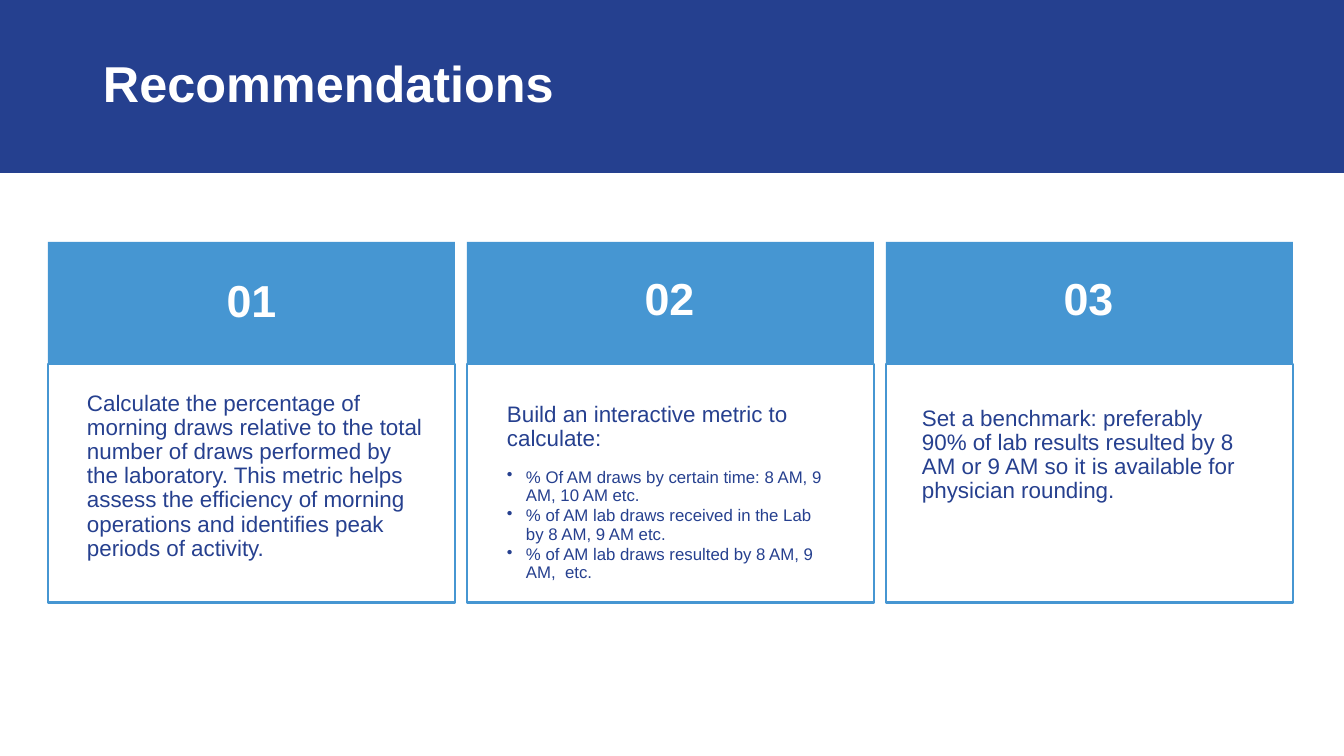
from dataclasses import dataclass

from lxml import etree
from pptx import Presentation
from pptx.dml.color import RGBColor
from pptx.enum.shapes import MSO_SHAPE
from pptx.enum.text import MSO_ANCHOR, MSO_AUTO_SIZE, PP_ALIGN
from pptx.oxml.ns import qn
from pptx.util import Pt

RECTANGLE = MSO_SHAPE.RECTANGLE
TOP, MIDDLE = MSO_ANCHOR.TOP, MSO_ANCHOR.MIDDLE
LEFT, CENTER = PP_ALIGN.LEFT, PP_ALIGN.CENTER
NO_AUTOFIT = MSO_AUTO_SIZE.NONE

HEADING = "Recommendations"
RECOMMENDATIONS = [
    {
        "number": "01",
        "number_margins": (32, 32, 32, 32),
        "statement": "Calculate the percentage of morning draws relative to the total number of "
                     "draws performed by the laboratory. This metric helps assess the efficiency "
                     "of morning operations and identifies peak periods of activity.",
        "metrics": [],
        "margins": (39, 28, 29, 10),
    },
    {
        "number": "02",
        "number_margins": (31, 30, 33, 34),
        "statement": "Build an interactive metric to calculate:",
        "metrics": [
            "% Of AM draws by certain time: 8 AM, 9 AM, 10 AM etc.",
            "% of AM lab draws received in the Lab by 8 AM, 9 AM etc.",
            "% of AM lab draws resulted by 8 AM, 9 AM,  etc.",
        ],
        "margins": (40, 39, 40, 10),
    },
    {
        "number": "03",
        "number_margins": (31, 30, 33, 34),
        "statement": "Set a benchmark: preferably 90% of lab results resulted by 8 AM or 9 AM "
                     "so it is available for physician rounding.",
        "metrics": [],
        "margins": (36, 43, 44, 10),
    },
]


@dataclass(frozen=True)
class Theme:
    font: str = "Arial"
    band: str = "25408F"
    accent: str = "4696D2"
    ink: str = "26408F"
    white: str = "FFFFFF"
    heading_size: int = 36
    number_size: int = 32
    statement_size: int = 16
    metric_size: int = 12
    border: int = 2


THEME = Theme()
EMU_PER_PX = 914400 / 100.8
SLIDE_WIDTH, SLIDE_HEIGHT = 1344, 756
BAND_HEIGHT = 173
CARD_LEFT, CARD_TOP, CARD_WIDTH, CARD_PITCH = 48, 242, 407, 419
NUMBER_HEIGHT, BODY_HEIGHT = 122, 239
BULLET_INDENT = 19


def px(length):
    return round(length * EMU_PER_PX)


def color(code):
    return RGBColor.from_string(code)


def add_panel(slide, left, top, width, height, fill, line=None):
    panel = slide.shapes.add_shape(RECTANGLE, px(left), px(top), px(width), px(height))
    panel.shadow.inherit = False
    panel.fill.solid()
    panel.fill.fore_color.rgb = color(fill)
    if line:
        panel.line.color.rgb = color(line)
        panel.line.width = Pt(THEME.border)
    else:
        panel.line.fill.background()
    return panel


def set_frame(frame, margins, anchor):
    frame.word_wrap = True
    frame.auto_size = NO_AUTOFIT
    frame.vertical_anchor = anchor
    frame.margin_left, frame.margin_top, frame.margin_right, frame.margin_bottom = map(px, margins)


def write(paragraph, text, *, size, ink, bold=False, align=LEFT, before=0, bullet=False):
    if bullet:
        properties = paragraph._p.get_or_add_pPr()
        properties.set("marL", str(px(BULLET_INDENT)))
        properties.set("indent", str(-px(BULLET_INDENT)))
        etree.SubElement(properties, qn("a:buChar")).set("char", "•")
    paragraph.alignment = align
    paragraph.line_spacing = 0.9
    paragraph.space_before = Pt(before)
    run = paragraph.add_run()
    run.text = text
    run.font.name = THEME.font
    run.font.size = Pt(size)
    run.font.bold = bold
    run.font.color.rgb = color(ink)


def add_heading(slide):
    heading = slide.shapes.title
    heading.left, heading.top, heading.width, heading.height = map(px, (93, 22, 1140, 129))
    set_frame(heading.text_frame, (10, 5, 10, 5), MIDDLE)
    write(heading.text_frame.paragraphs[0], HEADING,
          size=THEME.heading_size, ink=THEME.white, bold=True)
    band = add_panel(slide, 0, 0, SLIDE_WIDTH, BAND_HEIGHT, THEME.band)
    heading.element.addprevious(band.element)


def add_card(slide, left, card):
    header = add_panel(slide, left, CARD_TOP, CARD_WIDTH, NUMBER_HEIGHT, THEME.accent)
    set_frame(header.text_frame, card["number_margins"], MIDDLE)
    write(header.text_frame.paragraphs[0], card["number"],
          size=THEME.number_size, ink=THEME.white, bold=True, align=CENTER)

    body = add_panel(slide, left, CARD_TOP + NUMBER_HEIGHT, CARD_WIDTH, BODY_HEIGHT,
                     THEME.white, line=THEME.accent)
    set_frame(body.text_frame, card["margins"], TOP)
    write(body.text_frame.paragraphs[0], card["statement"],
          size=THEME.statement_size, ink=THEME.ink)
    for index, metric in enumerate(card["metrics"]):
        write(body.text_frame.add_paragraph(), metric, size=THEME.metric_size,
              ink=THEME.ink, before=1.8 if index else 12.4, bullet=True)


def main():
    deck = Presentation()
    deck.slide_width, deck.slide_height = px(SLIDE_WIDTH), px(SLIDE_HEIGHT)
    slide = deck.slides.add_slide(deck.slide_layouts.get_by_name("Title Only"))
    add_heading(slide)
    for column, card in enumerate(RECOMMENDATIONS):
        add_card(slide, CARD_LEFT + column * CARD_PITCH, card)
    deck.save("out.pptx")


if __name__ == "__main__":
    main()
